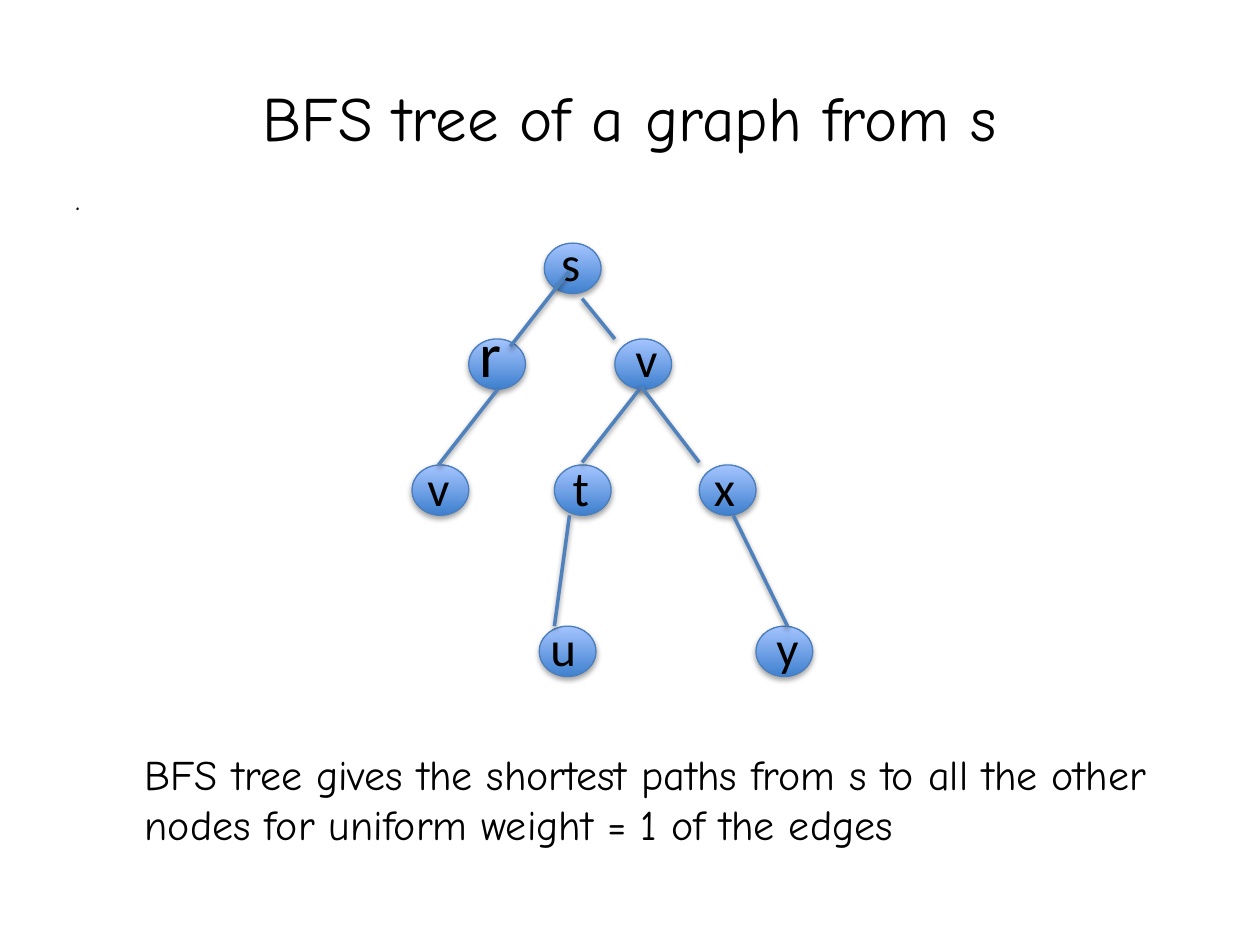
from lxml import etree
from pptx import Presentation
from pptx.dml.color import RGBColor
from pptx.enum import shapes, text
from pptx.oxml import ns
from pptx.util import Inches, Pt

BLACK = RGBColor(0, 0, 0)
DARK = RGBColor(0x3F, 0x80, 0xCE)
LIGHT = RGBColor(0xA4, 0xC4, 0xFF)
RIM = RGBColor(0x4B, 0x7E, 0xBC)
EDGE = RGBColor(0x4F, 0x81, 0xBD)
HAND, SANS = "Comic Neue", "Calibri"
WIDE, HIGH = 0.45, 0.4

# left, top, width, height, size, words, align, anchor, space before
MID, LEFT = text.PP_ALIGN.CENTER, text.PP_ALIGN.LEFT
TOP = text.MSO_ANCHOR.TOP
TEXTS = [
    (0.5, 0.3, 9, 1.25, 36, "BFS tree of a graph from s", MID,
     text.MSO_ANCHOR.MIDDLE, 0),
    (0.5, 1.37, 9.5, 5.88, 18, ".", LEFT, TOP, 3.6),
    (1.05, 5.89, 8.45, 0.91, 24,
     "BFS tree gives the shortest paths from s to all the other nodes "
     "for uniform weight = 1 of the edges", LEFT, TOP, 0),
]
# node left, node top, label, label centre, label top, label size
NODES = [
    (4.32, 1.93, "s", 4.53, 1.8, 28),
    (3.72, 2.69, "r", 3.89, 2.45, 36),
    (4.88, 2.69, "v", 5.13, 2.56, 28),
    (3.27, 3.69, "v", 3.48, 3.58, 28),
    (4.4, 3.69, "t", 4.61, 3.58, 28),
    (5.55, 3.69, "x", 5.75, 3.58, 28),
    (4.28, 4.97, "u", 4.47, 4.85, 28),
    (6, 4.97, "y", 6.25, 4.85, 28),
]
EDGES = [
    (4.52, 2.15, 4.05, 2.75), (3.95, 3.09, 3.48, 3.69),
    (5.09, 3.07, 4.62, 3.67), (4.62, 2.37, 4.88, 2.69),
    (5.09, 3.07, 5.55, 3.67), (4.52, 4.09, 4.4, 4.97),
    (5.82, 4.09, 6.25, 4.97),
]


def shade(item, dist, alpha):
    """Give a shape or line a soft shadow straight below it."""
    props = item._element.spPr
    for old in props.findall(ns.qn("a:effectLst")):
        props.remove(old)
    box = etree.SubElement(props, ns.qn("a:effectLst"))
    cast = etree.SubElement(
        box, ns.qn("a:outerShdw"), blurRad=str(Pt(3.1)), dist=str(Pt(dist)),
        dir="5400000", rotWithShape="0")
    tint = etree.SubElement(cast, ns.qn("a:srgbClr"), val="000000")
    etree.SubElement(tint, ns.qn("a:alpha"), val=str(alpha * 1000))


def write(area, size, words, font, align=MID, anchor=TOP, gap=0):
    """Add a wrapped text box with one run."""
    frame = slide.shapes.add_textbox(*map(Inches, area)).text_frame
    frame.word_wrap = True
    frame.vertical_anchor = anchor
    para = frame.paragraphs[0]
    para.alignment = align
    para.space_before = Pt(gap)
    run = para.add_run()
    run.text = words
    run.font.size = Pt(size)
    run.font.name = font
    run.font.color.rgb = BLACK


def node(left, top):
    """Add one shaded tree node."""
    oval = slide.shapes.add_shape(
        shapes.MSO_SHAPE.OVAL, *map(Inches, (left, top, WIDE, HIGH)))
    oval.fill.gradient()
    oval.fill.gradient_angle = 90
    for stop, color, place in zip(oval.fill.gradient_stops,
                                  (DARK, LIGHT), (0, 1)):
        stop.color.rgb = color
        stop.position = place
    oval.line.color.rgb = RIM
    oval.line.width = Pt(0.75)
    shade(oval, 1.8, 35)


def link(ends):
    """Add one tree edge."""
    line = slide.shapes.add_connector(
        shapes.MSO_CONNECTOR.STRAIGHT, *map(Inches, ends))
    line.line.color.rgb = EDGE
    line.line.width = Pt(2)
    shade(line, 1.6, 38)


deck = Presentation()
deck.slide_width, deck.slide_height = Inches(10), Inches(7.5)
slide = deck.slides.add_slide(deck.slide_layouts[6])

for *area, size, words, align, anchor, gap in TEXTS:
    write(area, size, words, HAND, align, anchor, gap)
for left, top, *_ in NODES:
    node(left, top)
for _, _, name, mid, top, size in NODES:
    write((mid - 0.26, top, 0.52, size / 50), size, name, SANS)
for ends in EDGES:
    link(ends)

deck.save("out.pptx")
